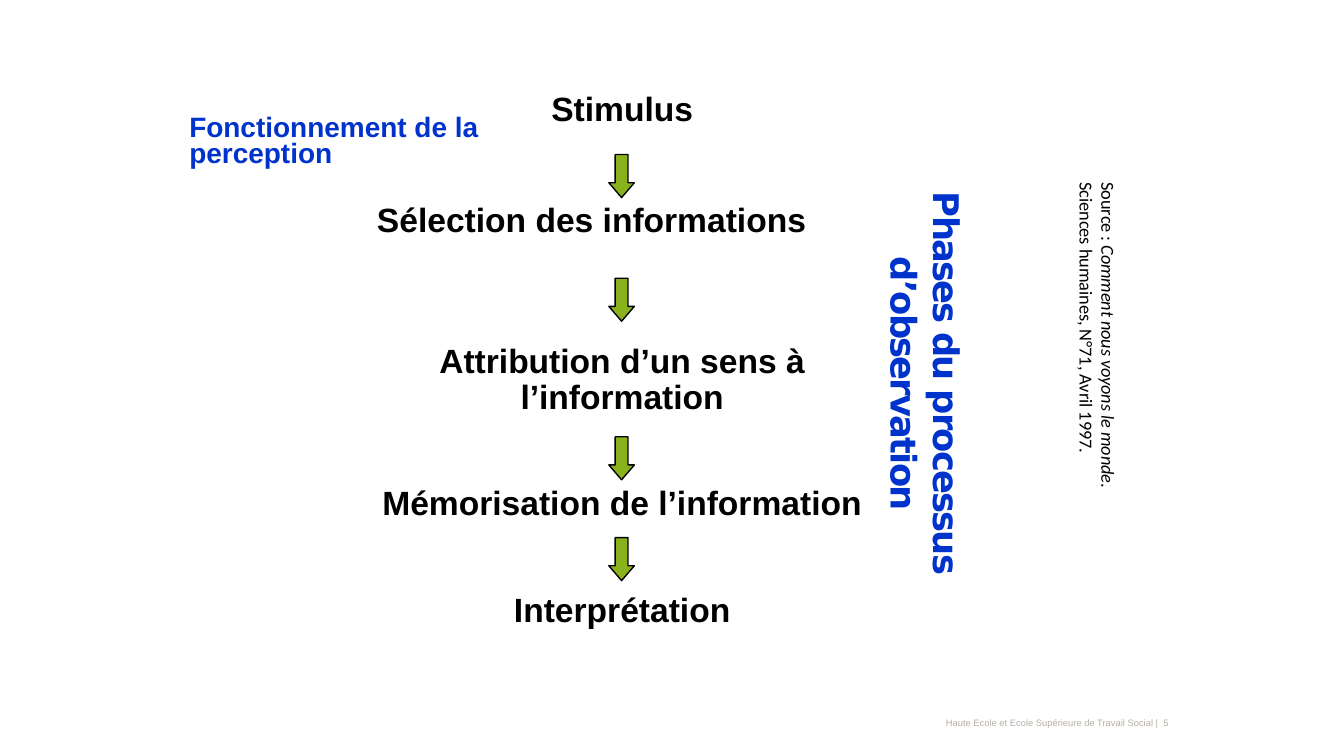
from dataclasses import dataclass
from lxml import etree
from pptx import Presentation
from pptx.dml.color import RGBColor
from pptx.enum import shapes, text
from pptx.oxml import ns
from pptx.util import Inches, Pt


@dataclass(frozen=True)
class Theme:
    sans: str = "Arial"
    wide: str = "DejaVu Sans"
    serif: str = "Calibri"
    ink: str = "000000"
    blue: str = "0033CC"
    green: str = "8AB21D"
    gray: str = "B5AEA7"
    step: float = 18
    head: float = 18.9
    sub: float = 15
    note: float = 9.75
    foot: float = 5


T = Theme()
MID = text.MSO_ANCHOR.MIDDLE
TOP = text.MSO_ANCHOR.TOP
LEFT, CENTER, RIGHT = text.PP_ALIGN.LEFT, text.PP_ALIGN.CENTER, text.PP_ALIGN.RIGHT


def add_text(slide, box, lines, font, size, color, bold=False, align=LEFT,
             anchor=TOP, inset=(0.1, 0.05), space=None, turn=0):
    shape = slide.shapes.add_textbox(*map(Inches, box))
    shape.rotation = turn
    frame = shape.text_frame
    frame.word_wrap = True
    frame.vertical_anchor = anchor
    frame.margin_left = frame.margin_right = Inches(inset[0])
    frame.margin_top = frame.margin_bottom = Inches(inset[1])
    frame.text = "\n".join(lines)
    for para in frame.paragraphs:
        para.alignment = align
        para.line_spacing = space
        for run in para.runs:
            style(run, font, size, color, bold)
    return frame


def style(run, font, size, color, bold=False, slant=False):
    run.font.name = font
    run.font.size = Pt(size)
    run.font.bold = bold
    run.font.italic = slant
    run.font.color.rgb = RGBColor.from_string(color)


def add_steps(slide, box):
    steps = [("Stimulus", 0), ("Sélection des informations\t", 40),
             ("Attribution d’un sens à l’information", 56),
             ("Mémorisation de l’information", 37), ("Interprétation", 38)]
    frame = add_text(slide, box, [name for name, gap in steps], T.sans, T.step,
                     T.ink, True, CENTER, inset=(0.05, 0.06), space=0.9)
    for para, (name, gap) in zip(frame.paragraphs, steps):
        if gap:
            para.space_before = Pt(gap)
        if "\t" in name:
            tabs = etree.SubElement(para._p.get_or_add_pPr(), ns.qn("a:tabLst"))
            etree.SubElement(tabs, ns.qn("a:tab"), pos=str(Inches(3.65)), algn="l")
    left, top, width, height = box
    for drop in (0.52, 1.44, 2.62, 3.37):
        add_arrow(slide, (left + width / 2 - 0.1, top + drop, 0.19, 0.32))


def add_arrow(slide, box):
    arrow = slide.shapes.add_shape(shapes.MSO_SHAPE.DOWN_ARROW, *map(Inches, box))
    arrow.adjustments[0] = 0.5
    arrow.adjustments[1] = 0.58
    arrow.shadow.inherit = False
    arrow.fill.solid()
    arrow.fill.fore_color.rgb = RGBColor.from_string(T.green)
    arrow.line.color.rgb = RGBColor.from_string(T.ink)
    arrow.line.width = Pt(0.75)


def add_title(slide, box):
    frame = add_text(slide, box, ["Phases du processus\vd’observation"], T.wide,
                     T.head, T.blue, True, CENTER, MID, turn=90)
    for run in frame.paragraphs[0].runs:
        run.font._element.set("spc", "-100")


def add_topic(slide, box):
    add_text(slide, box, ["Fonctionnement de la perception"], T.sans, T.sub,
             T.blue, True, inset=(0.1, 0.04), space=0.8)


def add_source(slide, box):
    frame = add_text(slide, box, ["Source : ", "Sciences humaines, N°71, Avril 1997."],
                     T.serif, T.note, T.ink, inset=(0.1, 0.05), turn=90)
    for part, slant in (("Comment nous voyons le monde", True), (".", False)):
        run = frame.paragraphs[0].add_run()
        run.text = part
        style(run, T.serif, T.note, T.ink, slant=slant)


def add_footer(slide, box):
    add_text(slide, box, ["Haute Ecole et Ecole Supérieure de Travail Social |  5"],
             T.sans, T.foot, T.gray, align=RIGHT, anchor=MID, inset=(0.1, 0),
             space=Pt(7))


def main():
    deck = Presentation()
    deck.slide_width = Inches(10)
    deck.slide_height = deck.slide_width * 9 // 16
    slide = deck.slides.add_slide(deck.slide_layouts[6])
    add_footer(slide, (6.33, 5.32, 2.47, 0.1))
    add_steps(slide, (2.71, 0.63, 3.84, 4.44))
    add_title(slide, (5.08, 2.51, 3.62, 0.69))
    add_topic(slide, (1.31, 0.82, 2.88, 0.5))
    add_source(slide, (6.57, 2.64, 3.19, 0.43))
    deck.save("out.pptx")


if __name__ == "__main__":
    main()
